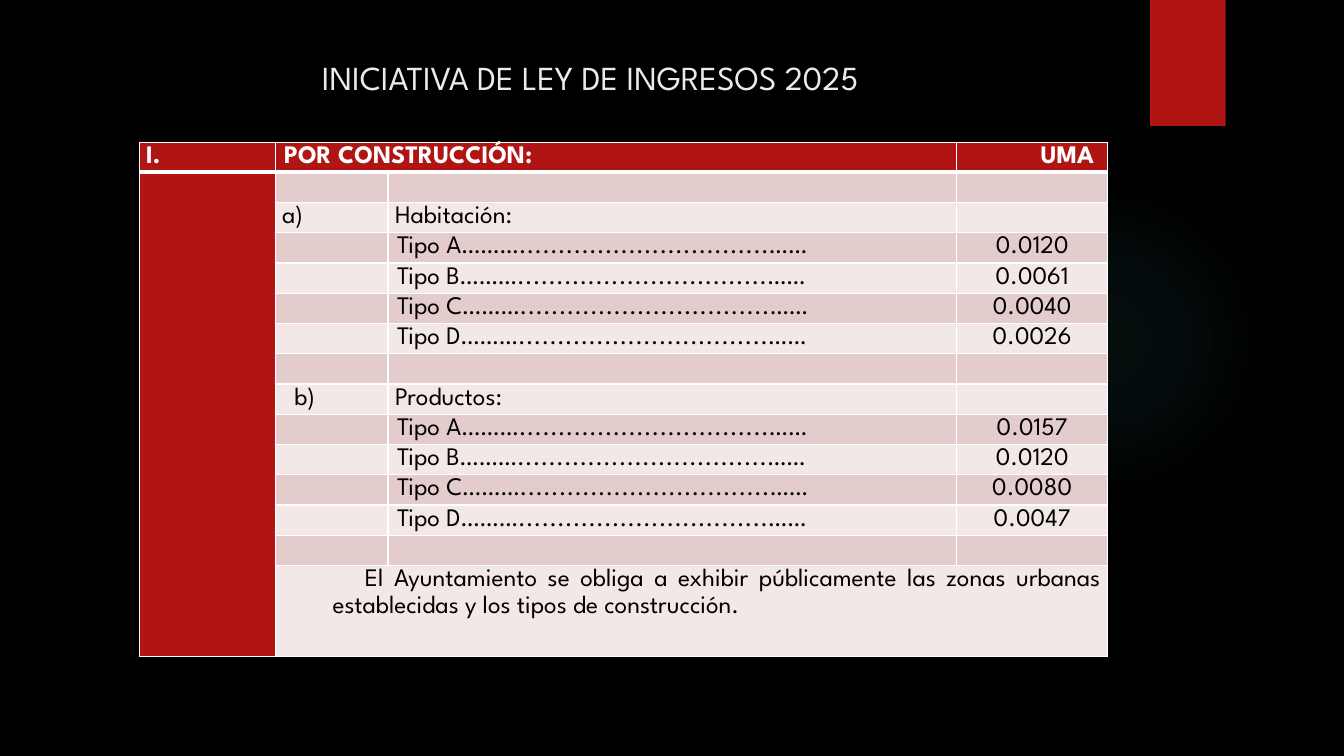
from lxml.etree import SubElement
from pptx import Presentation
from pptx.dml.color import RGBColor
from pptx.enum.shapes import MSO_SHAPE
from pptx.enum.text import MSO_ANCHOR, PP_ALIGN
from pptx.oxml import parse_xml
from pptx.oxml.ns import nsdecls, qn
from pptx.util import Pt

DOTS = "………................................……"
GROUPS = [
    ("a)", 0, "Habitación:", ["0.0120", "0.0061", "0.0040", "0.0026"]),
    ("b)", 8.6, "Productos:", ["0.0157", "0.0120", "0.0080", "0.0047"]),
]
NOTE = ("El Ayuntamiento se obliga a exhibir públicamente las zonas urbanas "
        "establecidas y los tipos de construcción.")


def hue(code):
    return RGBColor.from_string(code)


def put(frame, text, font="League Spartan", size=18, color="000000", bold=False,
        align=PP_ALIGN.JUSTIFY, left=0, first=0, lead=1.15):
    para = frame.paragraphs[0]
    para.alignment = align
    para.line_spacing = lead
    props = para._p.get_or_add_pPr()
    props.set("marL", str(Pt(left)))
    props.set("indent", str(Pt(first)))
    run = para.add_run()
    run.text = text
    run.font.name = font
    run.font.size = Pt(size)
    run.font.bold = bold
    run.font.color.rgb = hue(color)


class Deck:
    """Hold the style and the current slide."""

    red, white, pale, rose = "B01513", "FFFFFF", "F2E8E7", "E4CCCC"

    def __init__(self):
        self.show = Presentation()
        self.show.slide_width, self.show.slide_height = Pt(960), Pt(540)
        self.slide = self.show.slides.add_slide(self.show.slide_layouts[5])
        back = self.slide.background.fill
        back.solid()
        back.fore_color.rgb = hue("000000")

    def shape(self, kind, *box):
        item = self.slide.shapes.add_shape(kind, *map(Pt, box))
        item.shadow.inherit = False
        item.line.fill.background()
        return item

    def block(self, *box):
        item = self.shape(MSO_SHAPE.RECTANGLE, *box)
        item.fill.solid()
        item.fill.fore_color.rgb = hue(self.red)

    def glow(self, color, stops, *box):
        item = self.shape(MSO_SHAPE.OVAL, *box)
        marks = "".join(
            f'<a:gs pos="{pos * 1000}"><a:srgbClr val="{color}">'
            f'<a:alpha val="{alpha * 1000}"/></a:srgbClr></a:gs>'
            for pos, alpha in stops)
        item._element.spPr.insert(2, parse_xml(
            f'<a:gradFill {nsdecls("a")}><a:gsLst>{marks}</a:gsLst>'
            '<a:path path="circle"><a:fillToRect l="50000" t="50000" '
            'r="50000" b="50000"/></a:path></a:gradFill>'))

    def title(self, text, *box):
        head = self.slide.shapes.title
        head.left, head.top, head.width, head.height = map(Pt, box)
        head.text_frame.vertical_anchor = MSO_ANCHOR.MIDDLE
        put(head.text_frame, text, size=24, color="EBEBEB",
            align=PP_ALIGN.CENTER, lead=1)

    def edge(self, cell, top=1, base=1):
        props = cell._tc.get_or_add_tcPr()
        for side, width in zip("LRTB", (1, 1, top, base)):
            props.append(parse_xml(
                f'<a:ln{side} {nsdecls("a")} w="{Pt(width)}"><a:solidFill>'
                f'<a:srgbClr val="{self.white}"/></a:solidFill></a:ln{side}>'))

    def grid(self, left, top, cols, rows):
        box = map(Pt, (left, top, sum(cols), sum(rows)))
        table = self.slide.shapes.add_table(len(rows), len(cols), *box).table
        table.horz_banding = False
        for col, width in zip(table.columns, cols):
            col.width = Pt(width)
        for num, height in enumerate(rows):
            table.rows[num].height = Pt(height)
            for col in range(len(cols)):
                cell = table.cell(num, col)
                self.edge(cell, 3 if num == 1 else 1, 3 if num == 0 else 1)
                cell.margin_left = cell.margin_right = Pt(5)
                cell.margin_top = cell.margin_bottom = 0
                cell.fill.solid()
                band = self.rose if num % 2 else self.pale
                cell.fill.fore_color.rgb = hue(
                    self.red if num == 0 or col == 0 else band)
        return table

    def fill(self, table):
        last = len(table.rows) - 1
        for start, end in (((0, 1), (0, 2)), ((1, 0), (last, 0)),
                           ((last, 1), (last, 3))):
            table.cell(*start).merge(table.cell(*end))

        def write(row, col, text, **look):
            put(table.cell(row, col).text_frame, text, **look)

        head = dict(color=self.white, bold=True)
        write(0, 0, "I.", **head)
        write(0, 1, "POR CONSTRUCCIÓN:", left=1.4, **head)
        write(0, 3, "UMA ", align=PP_ALIGN.RIGHT, **head)
        for part, (mark, inset, name, rates) in enumerate(GROUPS):
            row = 2 + 6 * part
            write(row, 1, mark, left=inset)
            write(row, 2, name)
            for step, (kind, rate) in enumerate(zip("ABCD", rates), row + 1):
                write(step, 2, f"Tipo {kind}{DOTS}", left=1.4)
                write(step, 3, rate, align=PP_ALIGN.CENTER)
        write(last, 1, NOTE, left=36, first=23)
        for cell in table.iter_cells():
            if not cell.text:
                para = cell.text_frame.paragraphs[0]
                SubElement(para._p, qn("a:endParaRPr")).set("sz", "1000")


def main():
    deck = Deck()
    deck.glow("50B9C1", [(0, 7), (36, 6), (69, 0)], 677.5, 131.8, 221.8, 221.8)
    deck.block(821.5, 0, 54, 90)
    deck.title("INICIATIVA DE LEY DE INGRESOS 2025", 51.1, 36, 740.9, 37.4)
    table = deck.grid(99.4, 101.5, [97.2, 80.6, 406.1, 108], [21.6] * 14 + [64.8])
    deck.fill(table)
    deck.show.save("out.pptx")


if __name__ == "__main__":
    main()
